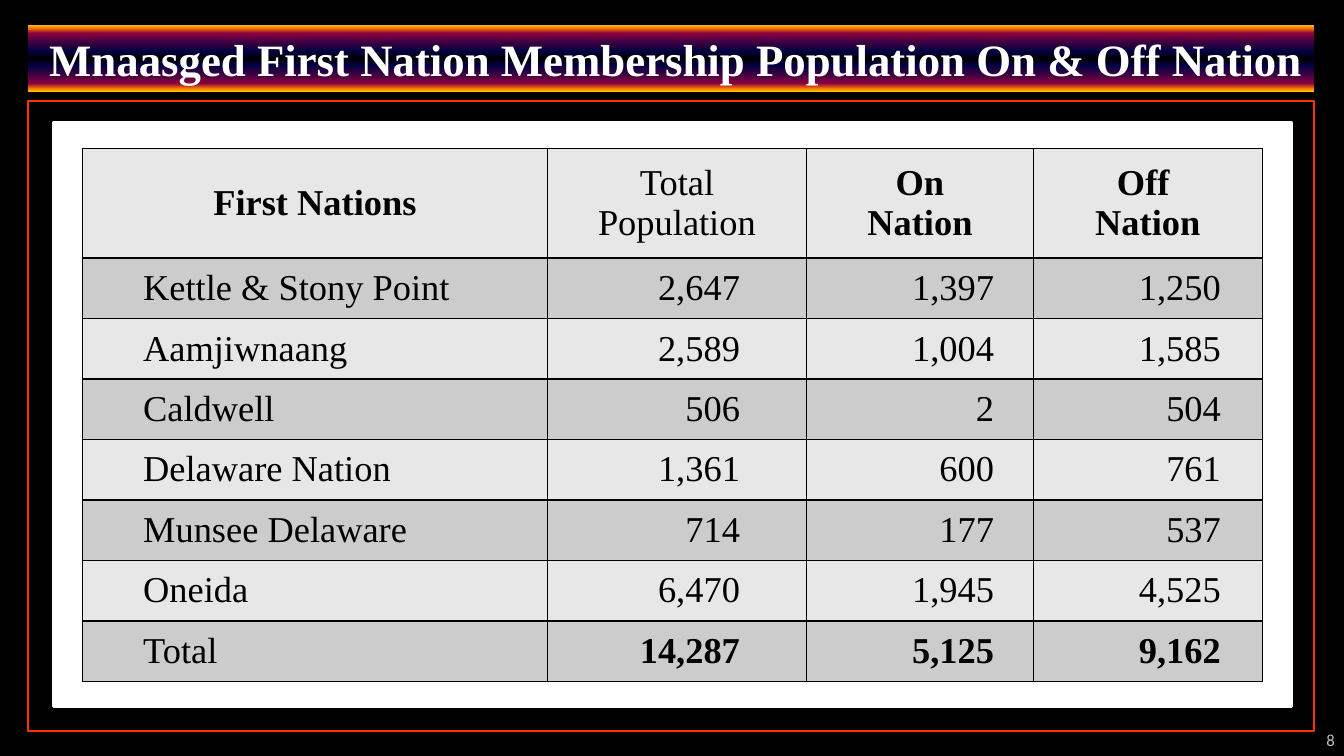
from lxml import etree
from pptx import Presentation
from pptx.dml.color import RGBColor
from pptx.enum.shapes import MSO_SHAPE
from pptx.enum.text import MSO_ANCHOR, PP_ALIGN
from pptx.oxml.ns import qn
from pptx.util import Inches, Pt

RECTANGLE = MSO_SHAPE.RECTANGLE
MIDDLE, BOTTOM = MSO_ANCHOR.MIDDLE, MSO_ANCHOR.BOTTOM
LEFT, CENTER, RIGHT = PP_ALIGN.LEFT, PP_ALIGN.CENTER, PP_ALIGN.RIGHT

COLORS = {
    "background": "000000",
    "panel": "FFFFFF",
    "frame": "FF3300",
    "title": "FFFFFF",
    "number": "BDBDBD",
    "ink": "000000",
    "light_row": "E7E7E7",
    "dark_row": "CCCCCC",
}
BANNER_HALF = [(0, "FFBF00"), (5, "F27300"), (12, "8F0040"), (25, "400040"), (40, "000040")]
BANNER_STOPS = BANNER_HALF + [(50, "000000")] + [
    (100 - position, color) for position, color in reversed(BANNER_HALF)
]

HEADERS = [["First Nations"], ["Total Population"], ["On", "Nation"], ["Off ", "Nation"]]
POPULATIONS = [
    ("Kettle & Stony Point", 2647, 1397, 1250),
    ("Aamjiwnaang", 2589, 1004, 1585),
    ("Caldwell", 506, 2, 504),
    ("Delaware Nation", 1361, 600, 761),
    ("Munsee Delaware", 714, 177, 537),
    ("Oneida", 6470, 1945, 4525),
    ("Total", 14287, 5125, 9162),
]
COLUMN_WIDTHS = [4.61, 2.57, 2.25, 2.27]
NUMBER_MARGINS = [0.66, 0.39, 0.41]
HEADER_HEIGHT, ROW_HEIGHT = 1.09, 0.6


def rgb(name):
    return RGBColor.from_string(COLORS[name])


class SlideBuilder:
    font = "Times New Roman"
    table_size = 26

    def __init__(self, presentation):
        self.slide = presentation.slides.add_slide(presentation.slide_layouts[6])
        fill = self.slide.background.fill
        fill.solid()
        fill.fore_color.rgb = rgb("background")

    def add_lines(self, frame, lines, size, color, align, bold=False, font=None):
        for index, line in enumerate(lines):
            paragraph = frame.add_paragraph() if index else frame.paragraphs[0]
            paragraph.alignment = align
            run = paragraph.add_run()
            run.text = line
            run.font.name = font or self.font
            run.font.size = Pt(size)
            run.font.bold = bold
            run.font.color.rgb = rgb(color)

    def rectangle(self, left, top, width, height, fill=None, line=None, line_width=1):
        shape = self.slide.shapes.add_shape(
            RECTANGLE, Inches(left), Inches(top), Inches(width), Inches(height))
        shape.shadow.inherit = False
        if fill:
            shape.fill.solid()
            shape.fill.fore_color.rgb = rgb(fill)
        else:
            shape.fill.background()
        if line:
            shape.line.color.rgb = rgb(line)
            shape.line.width = Pt(line_width)
        else:
            shape.line.fill.background()
        return shape

    def banner(self, left, top, width, height, text):
        shape = self.rectangle(left, top, width, height)
        shape.fill.gradient()
        shape.fill.gradient_angle = 90
        stops = shape.element.spPr.find(qn("a:gradFill")).find(qn("a:gsLst"))
        for stop in list(stops):
            stops.remove(stop)
        for position, color in BANNER_STOPS:
            stop = etree.SubElement(stops, qn("a:gs"), pos=str(position * 1000))
            etree.SubElement(stop, qn("a:srgbClr"), val=color)
        frame = shape.text_frame
        frame.word_wrap = False
        frame.vertical_anchor = MIDDLE
        frame.margin_left, frame.margin_right = Inches(0.2), Inches(0.1)
        self.add_lines(frame, [text], 32, "title", CENTER, bold=True)

    def page_number(self, left, top, width, height, text):
        box = self.slide.shapes.add_textbox(
            Inches(left), Inches(top), Inches(width), Inches(height))
        frame = box.text_frame
        frame.word_wrap = True
        frame.vertical_anchor = BOTTOM
        frame.margin_left = frame.margin_right = 0
        self.add_lines(frame, [text], 12, "number", RIGHT, font="Calibri")

    def cell(self, cell, lines, fill, align, bold=False, left=0.1, right=0.1):
        cell.fill.solid()
        cell.fill.fore_color.rgb = rgb(fill)
        cell.vertical_anchor = MIDDLE
        cell.margin_left, cell.margin_right = Inches(left), Inches(right)
        self.add_lines(cell.text_frame, lines, self.table_size, "ink", align, bold)
        properties = cell._tc.get_or_add_tcPr()
        for index, side in enumerate(("a:lnL", "a:lnR", "a:lnT", "a:lnB")):
            border = etree.Element(qn(side), w=str(Pt(1)))
            solid = etree.SubElement(border, qn("a:solidFill"))
            etree.SubElement(solid, qn("a:srgbClr"), val=COLORS["ink"])
            properties.insert(index, border)

    def population_table(self, left, top):
        height = HEADER_HEIGHT + ROW_HEIGHT * len(POPULATIONS)
        table = self.slide.shapes.add_table(
            len(POPULATIONS) + 1, len(HEADERS), Inches(left), Inches(top),
            Inches(sum(COLUMN_WIDTHS)), Inches(height)).table
        for column, width in zip(table.columns, COLUMN_WIDTHS):
            column.width = Inches(width)
        for index, row in enumerate(table.rows):
            row.height = Inches(ROW_HEIGHT if index else HEADER_HEIGHT)

        for column, lines in enumerate(HEADERS):
            self.cell(table.cell(0, column), lines, "light_row", CENTER,
                      bold=column != 1, left=0.2, right=0.2)
        for row, (nation, *counts) in enumerate(POPULATIONS, start=1):
            fill = "dark_row" if row % 2 else "light_row"
            self.cell(table.cell(row, 0), [nation], fill, LEFT, left=0.6)
            for column, (count, margin) in enumerate(zip(counts, NUMBER_MARGINS), start=1):
                self.cell(table.cell(row, column), [f"{count:,}"], fill, RIGHT,
                          bold=nation == "Total", right=margin)


def main():
    presentation = Presentation()
    presentation.slide_width = Inches(13.33)
    presentation.slide_height = Inches(7.5)
    builder = SlideBuilder(presentation)
    builder.rectangle(0.53, 1.22, 12.28, 5.79, fill="panel", line="panel", line_width=2.5)
    builder.rectangle(0.28, 1, 12.75, 6.25, line="frame", line_width=1.5)
    builder.page_number(12.13, 7.34, 1.11, 0.15, "8")
    builder.banner(0.28, 0.25, 12.75, 0.66,
                   "Mnaasged First Nation Membership Population On & Off Nation")
    builder.population_table(0.82, 1.47)
    presentation.save("out.pptx")


if __name__ == "__main__":
    main()
